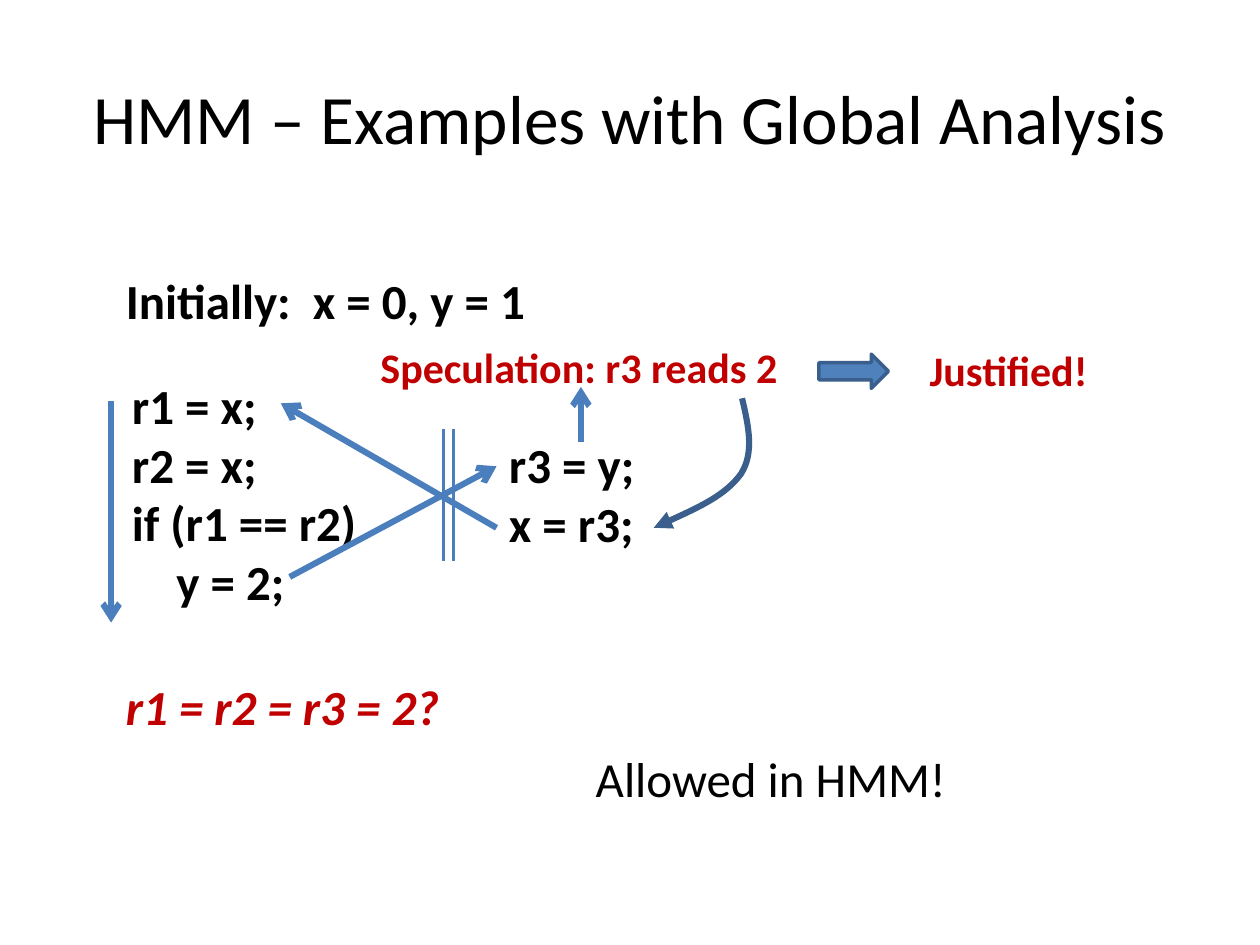
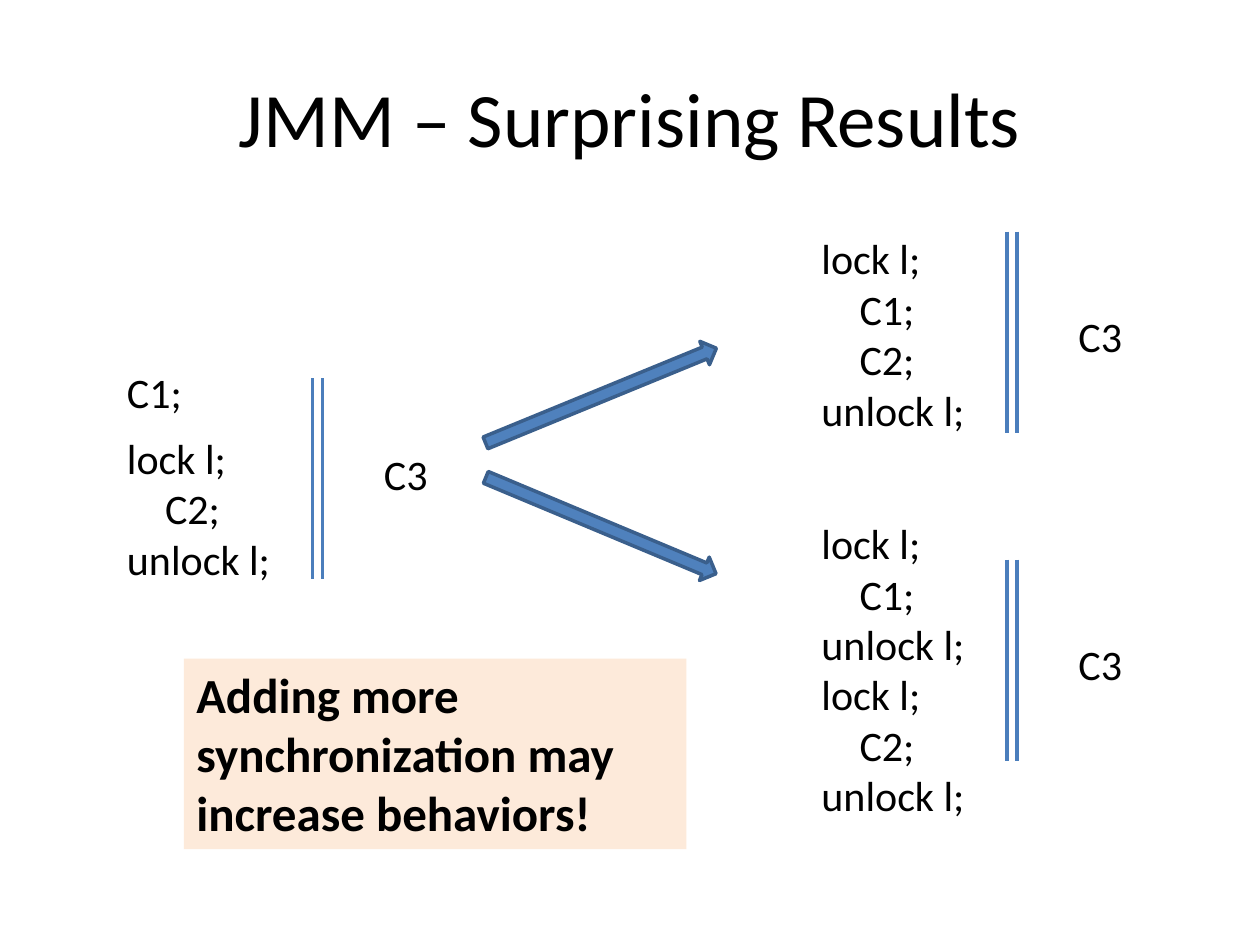
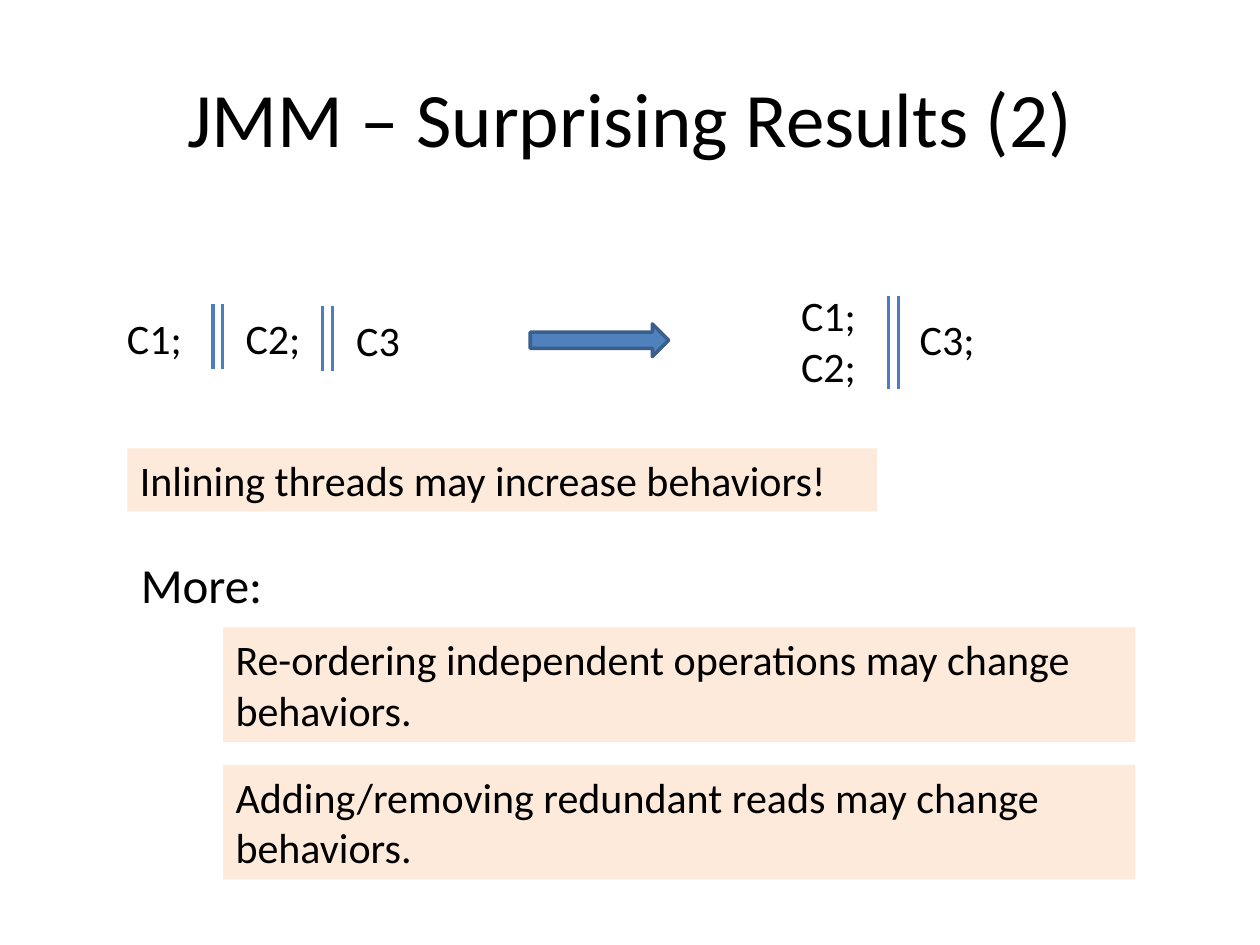
from dataclasses import dataclass

from lxml import etree
from pptx import Presentation
from pptx.dml.color import RGBColor
from pptx.enum.shapes import MSO_CONNECTOR, MSO_SHAPE
from pptx.enum.text import MSO_ANCHOR, MSO_AUTO_SIZE, PP_ALIGN
from pptx.oxml.ns import qn
from pptx.util import Cm, Pt

STRAIGHT = MSO_CONNECTOR.STRAIGHT
RIGHT_ARROW = MSO_SHAPE.RIGHT_ARROW
MIDDLE = MSO_ANCHOR.MIDDLE
GROW = MSO_AUTO_SIZE.SHAPE_TO_FIT_TEXT
LEFT, CENTER = PP_ALIGN.LEFT, PP_ALIGN.CENTER
TITLE_ONLY = 5


@dataclass(frozen=True)
class Theme:
    font: str = "Calibri"
    ink: str = "000000"
    emphasis: str = "C00000"
    line: str = "4B7EBC"
    arrow_fill: str = "4F81BD"
    arrow_line: str = "3A5F8C"
    callout: str = "FDEADA"
    title: float = 44
    long_title: float = 39.6
    large: float = 28
    body: float = 24
    thin: float = 2
    thick: float = 3.5
    bar_gap: float = 0.2
    indent_per_point: float = 0.032


@dataclass(frozen=True)
class Box:
    left: float
    top: float
    width: float
    height: float = 0

    def inner(self, left, top, width, height=0):
        return Box(self.left + left, self.top + top, width, height)

    def point(self, left, top):
        return Cm(self.left + left), Cm(self.top + top)

    def lengths(self):
        return [Cm(value) for value in (self.left, self.top, self.width, self.height)]


THEME = Theme()
TITLE_BOX = Box(1.27, 0.76, 22.86, 3.18)


def color(value):
    return RGBColor.from_string(value)


def write_text(frame, text, size=THEME.body, ink=THEME.ink, bold=False,
               italic=False, align=LEFT):
    frame.word_wrap = True
    for index, line in enumerate(text.split("\n")):
        paragraph = frame.add_paragraph() if index else frame.paragraphs[0]
        paragraph.alignment = align
        words = line.lstrip("\t")
        level = len(line) - len(words)
        if level:
            indent = Cm(level * size * THEME.indent_per_point)
            paragraph._p.get_or_add_pPr().set("marL", str(indent))
        run = paragraph.add_run()
        run.text = words
        run.font.name = THEME.font
        run.font.size = Pt(size)
        run.font.bold = bold
        run.font.italic = italic
        run.font.color.rgb = color(ink)


def add_text(slide, box, text, fill=None, **text_format):
    shape = slide.shapes.add_textbox(*box.lengths())
    write_text(shape.text_frame, text, **text_format)
    shape.text_frame.auto_size = GROW
    if not box.height:
        size = text_format.get("size", THEME.body)
        line_count = len(shape.text_frame.paragraphs)
        shape.height = Pt(line_count * size * 1.2 + 7.2)
    if fill:
        shape.fill.solid()
        shape.fill.fore_color.rgb = color(fill)


def style_line(shape, ink, width, head=None):
    shape.line.color.rgb = color(ink)
    shape.line.width = Pt(width)
    if head:
        line = shape.line._get_or_add_ln()
        etree.SubElement(line, qn("a:tailEnd"), type=head)


def add_line(shapes, start, end, width=THEME.thin, head=None):
    connector = shapes.add_connector(STRAIGHT, *start, *end)
    style_line(connector, THEME.line, width, head)
    etree.SubElement(connector._element.spPr, qn("a:effectLst"))


def add_block_arrow(slide, box, rotation=0):
    arrow = slide.shapes.add_shape(RIGHT_ARROW, *box.lengths())
    arrow.shadow.inherit = False
    arrow.rotation = rotation
    arrow.fill.solid()
    arrow.fill.fore_color.rgb = color(THEME.arrow_fill)
    style_line(arrow, THEME.arrow_line, THEME.thin)


def add_curve(slide, start, points):
    builder = slide.shapes.build_freeform(*start, scale=1.0)
    builder.add_line_segments(points, close=False)
    curve = builder.convert_to_shape()
    curve.shadow.inherit = False
    curve.fill.background()
    style_line(curve, THEME.arrow_line, THEME.thick, "triangle")
    outline = curve._element.spPr.find(".//" + qn("a:path"))
    segments = outline.findall(qn("a:lnTo"))
    for first in range(0, len(segments), 3):
        bezier = etree.SubElement(outline, qn("a:cubicBezTo"))
        for segment in segments[first:first + 3]:
            bezier.append(segment[0])
            outline.remove(segment)


def add_threads(slide, box, programs, bars, **text_format):
    for left, top, width, text in programs:
        add_text(slide, box.inner(left, top, width), text, **text_format)
    for left, top, height in bars:
        group = slide.shapes.add_group_shape()
        for offset in (0, THEME.bar_gap):
            add_line(group.shapes, box.point(left + offset, top),
                     box.point(left + offset, top + height))


def add_titled_slide(presentation, text, size=THEME.title):
    slide = presentation.slides.add_slide(presentation.slide_layouts[TITLE_ONLY])
    title = slide.shapes.title
    title.left, title.top, title.width, title.height = TITLE_BOX.lengths()
    title.text_frame.vertical_anchor = MIDDLE
    write_text(title.text_frame, text, size=size, align=CENTER)
    return slide


def add_racing_program(slide, box):
    add_threads(
        slide, box,
        [(0.17, 0, 6.53, "r1 = x;\nr2 = x;\nif (r1 == r2)\n\ty = 2;"),
         (7.77, 1.2, 3.53, "r3 = y;\nx = r3;")],
        [(6.7, 1.2, 2.67)],
        size=THEME.large, bold=True)
    arrows = [((3.6, 4.19), (7.77, 1.96)),
              ((7.77, 3.2), (3.42, 0.69)),
              ((0, 0.64), (0, 5.11)),
              ((9.47, 1.48), (9.47, 0.36))]
    for start, end in arrows:
        add_line(slide.shapes, box.point(*start), box.point(*end),
                 THEME.thick, "arrow")
    turns = [(12.85, 1.15), (12.97, 1.68), (12.7, 2.11),
             (12.39, 2.54), (11.68, 2.87), (10.94, 3.2)]
    add_curve(slide, box.point(12.72, 0.59), [box.point(*turn) for turn in turns])


def add_speculation(slide, box):
    red = {"ink": THEME.emphasis, "bold": True}
    add_text(slide, box.inner(0, 0, 9.91), "Speculation: r3 reads 2", **red)
    add_block_arrow(slide, box.inner(9.09, 0.38, 1.4, 0.69))
    add_text(slide, box.inner(11.07, 0.07, 4.22), "Justified!", **red)


def build_global_analysis(presentation):
    slide = add_titled_slide(presentation, "HMM – Examples with Global Analysis",
                             THEME.long_title)
    add_text(slide, Box(2.29, 5.33, 10.26), "Initially:  x = 0, y = 1",
             size=THEME.large, bold=True)
    add_racing_program(slide, Box(2.24, 7.44, 13.7, 5.11))
    add_speculation(slide, Box(7.42, 6.76, 15.29, 1.34))
    add_text(slide, Box(2.29, 13.51, 7.72), "r1 = r2 = r3 = 2?",
             size=THEME.large, ink=THEME.emphasis, bold=True, italic=True)
    add_text(slide, Box(11.76, 14.96, 8.2), "Allowed in HMM!", size=THEME.large)


def build_surprising_results(presentation):
    slide = add_titled_slide(presentation, "JMM – Surprising Results")
    width, bars_left, bars_height = 3.61, 3.99, 4.06
    partner_left, partner_width = 5.18, 1.8
    variants = [
        (Box(2.31, 7.26, 7), [(0, "C1;"), (1.33, "lock l;\n\tC2;\nunlock l;")],
         0.36, 1.65),
        (Box(16.31, 4.57, 7), [(0, "lock l;\n\tC1;\n\tC2;\nunlock l;")],
         0.1, 1.57),
        (Box(16.31, 10.31, 7),
         [(0, "lock l;\n\tC1;\nunlock l;\nlock l;\n\tC2;\nunlock l;")],
         0.97, 2.44),
    ]
    for box, blocks, bars_top, partner_top in variants:
        programs = [(0, top, width, text) for top, text in blocks]
        programs.append((partner_left, partner_top, partner_width, "C3"))
        add_threads(slide, box, programs, [(bars_left, bars_top, bars_height)])
    for top, rotation in ((7.72, 337.7), (10.34, 22.7)):
        add_block_arrow(slide, Box(9.6, top, 5.03, 0.51), rotation)
    add_text(slide, Box(3.71, 13.28, 10.13, 3.84),
             "Adding more synchronization may increase behaviors!",
             fill=THEME.callout, size=THEME.large, bold=True)


def build_more_results(presentation):
    slide = add_titled_slide(presentation, "JMM – Surprising Results (2)")
    add_threads(slide, Box(2.31, 6.17, 6.1),
                [(0, 0, 1.8, "C1;"), (2.39, 0, 1.8, "C2;"), (4.62, 0.05, 1.4, "C3")],
                [(1.98, -0.05, 1.31), (4.19, 0, 1.31)])
    add_block_arrow(slide, Box(10.69, 6.53, 2.79, 0.66))
    add_threads(slide, Box(15.9, 5.72, 4.2),
                [(0, 0, 1.8, "C1;\nC2;"), (2.39, 0.48, 1.8, "C3;")],
                [(2.01, 0.25, 1.88)])
    add_text(slide, Box(2.59, 11.05, 3.33), "More:", size=THEME.large)
    callouts = [
        (Box(2.57, 9.04, 15.11, 1.27), "Inlining threads may increase behaviors!"),
        (Box(4.5, 12.65, 18.39, 2.31),
         "Re-ordering independent operations may change behaviors."),
        (Box(4.5, 15.42, 18.39, 2.31),
         "Adding/removing redundant reads may change behaviors."),
    ]
    for box, text in callouts:
        add_text(slide, box, text, fill=THEME.callout)


def main():
    presentation = Presentation()
    presentation.slide_width = Cm(25.4)
    presentation.slide_height = Cm(19.05)
    build_global_analysis(presentation)
    build_surprising_results(presentation)
    build_more_results(presentation)
    presentation.save("out.pptx")


if __name__ == "__main__":
    main()
